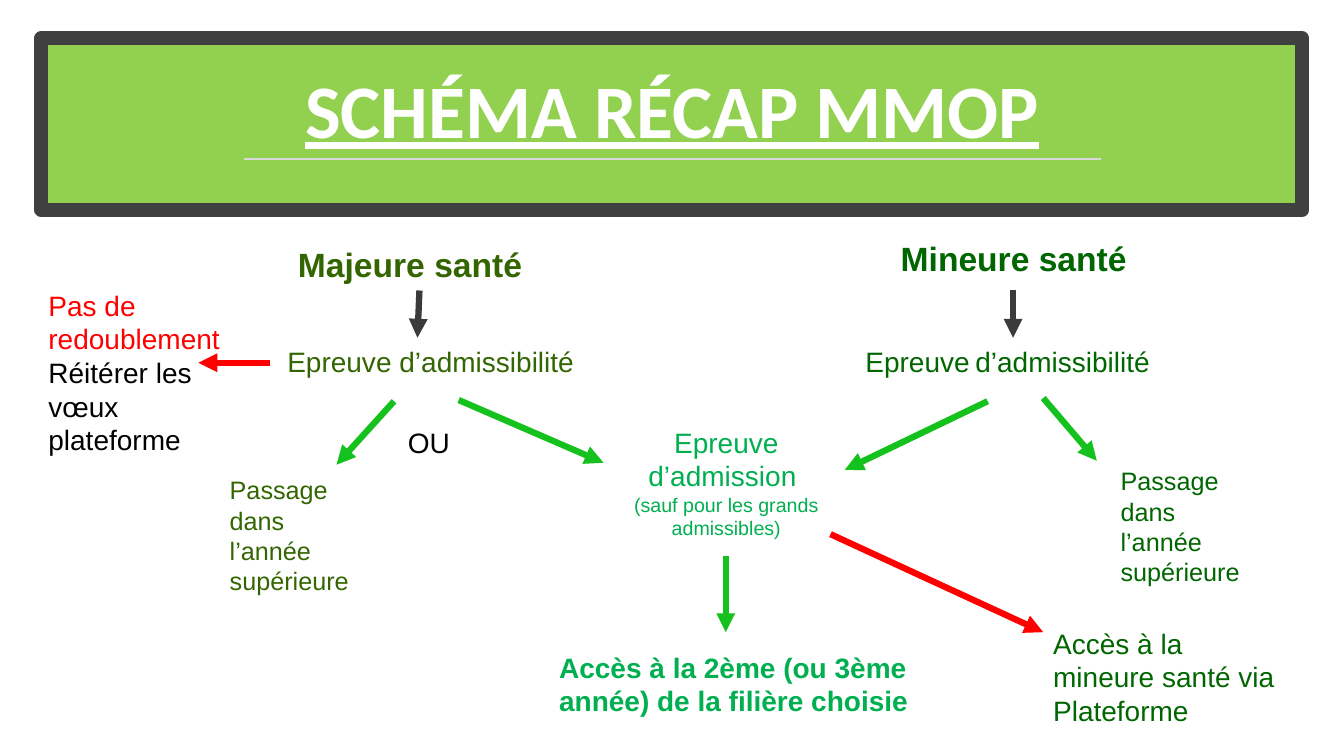
import pptx
import pptx.dml.color
import pptx.enum.shapes
import pptx.enum.text
import pptx.oxml
import pptx.oxml.ns
import pptx.util
from pptx.util import Cm

OLIVE = "336600"
FOREST = "006600"
EMERALD = "00B050"
ARROW_GREEN = "15C11D"
RED = "FF0000"
CHARCOAL = "3B3B3B"
BLACK = "000000"
WHITE = "FFFFFF"

CENTER = pptx.enum.text.PP_ALIGN.CENTER
LEFT = pptx.enum.text.PP_ALIGN.LEFT


def colour(value):
    return pptx.dml.color.RGBColor.from_string(value)


def write(para, text, size=20, hue=BLACK, bold=False, underline=False, font="Arial"):
    span = para.add_run()
    span.text = text
    span.font.name = font
    span.font.size = pptx.util.Pt(size)
    span.font.color.rgb = colour(hue)
    span.font.bold = bold
    span.font.underline = underline


def add_label(page, left, top, width, height, *lines, align=LEFT):
    box = page.shapes.add_textbox(Cm(left), Cm(top), Cm(width), Cm(height))
    frame = box.text_frame
    frame.word_wrap = True
    for index, spans in enumerate(lines):
        para = frame.add_paragraph() if index else frame.paragraphs[0]
        para.alignment = align
        for text, style in spans:
            write(para, text, **style)


def add_line(page, start, end, hue, width=4.5, arrow=True):
    line = page.shapes.add_connector(
        pptx.enum.shapes.MSO_CONNECTOR.STRAIGHT, *map(Cm, start + end))
    line.line.color.rgb = colour(hue)
    line.line.width = pptx.util.Pt(width)
    properties = line.element.spPr
    if arrow:
        head = pptx.oxml.parse_xml(
            f'<a:tailEnd {pptx.oxml.ns.nsdecls("a")} type="triangle"/>')
        line.line._get_or_add_ln().append(head)
    properties.append(pptx.oxml.parse_xml(
        f'<a:effectLst {pptx.oxml.ns.nsdecls("a")}/>'))


def add_banner(page, text):
    title = page.shapes.title
    title.left, title.top = Cm(1.47), Cm(1.3)
    title.width, title.height = Cm(30.94), Cm(2.72)
    frame = title.text_frame
    frame.word_wrap = True
    frame.auto_size = pptx.enum.text.MSO_AUTO_SIZE.NONE
    frame.vertical_anchor = pptx.enum.text.MSO_ANCHOR.BOTTOM
    para = frame.paragraphs[0]
    para.alignment = CENTER
    para.line_spacing = 0.9
    write(para, text, size=54, hue=WHITE, bold=True, underline=True, font="Calibri")

    banner = page.shapes.add_shape(
        pptx.enum.shapes.MSO_SHAPE.RECTANGLE, Cm(1.04), Cm(0.97), Cm(31.78), Cm(4.32))
    banner.shadow.inherit = False
    banner.fill.solid()
    banner.fill.fore_color.rgb = colour("92D050")
    banner.line.color.rgb = colour("404040")
    banner.line.width = pptx.util.Pt(10)
    title.element.addprevious(banner.element)
    add_line(page, (6.15, 4.01), (27.74, 4.01), "D9D9D9", width=1.75, arrow=False)


def add_tracks(page):
    tracks = [
        ("Majeure santé", OLIVE, (7.26, 6.02), 6.99, (5.54, 11.84)),
        ("Mineure santé", FOREST, (22.45, 5.87), 8.79, (27.99, 11.61)),
    ]
    for name, hue, corner, width, passage in tracks:
        add_label(page, *corner, width, 1.27, [(name, dict(size=24, hue=hue, bold=True))])
        add_label(page, *passage, 4.09, 3.33,
                  [("Passage dans l’année supérieure", dict(size=18, hue=hue))])
    add_label(page, 6.99, 8.56, 7.92, 1.12,
              [("Epreuve d’admissibilité", dict(hue=OLIVE))])
    add_label(page, 21.56, 8.56, 7.92, 1.12,
              [("Epreuve", dict(hue=FOREST)), (" ", dict(size=14, hue=FOREST)),
               ("d’admissibilité", dict(hue=FOREST))])


def add_outcomes(page):
    add_label(page, 0.97, 7.14, 5.41, 4.52,
              [("Pas de redoublement", dict(hue=RED))],
              [("Réitérer les vœux plateforme", dict(hue=BLACK))])
    add_label(page, 10.03, 10.59, 1.93, 1.12, [("OU", dict(hue=BLACK))])
    add_label(page, 14.94, 10.59, 6.73, 3.18,
              [("Epreuve d’admission ", dict(hue=EMERALD))],
              [("(sauf pour les grands admissibles)", dict(size=14, hue=EMERALD))],
              align=CENTER)
    add_label(page, 13.84, 16.26, 9.75, 1.96,
              [("Accès à la 2ème (ou 3ème année) de la filière choisie",
                dict(hue=EMERALD, bold=True))])
    add_label(page, 26.29, 15.65, 6.1, 2.82,
              [("Accès à la mineure santé via Plateforme", dict(hue=FOREST))])


def add_arrows(page):
    arrows = [
        ((10.57, 7.32), (10.52, 8.51), CHARCOAL),
        ((25.53, 7.32), (25.53, 8.51), CHARCOAL),
        ((6.81, 9.14), (5, 9.14), RED),
        ((9.93, 10.11), (8.48, 11.71), ARROW_GREEN),
        ((11.56, 10.08), (15.21, 11.66), ARROW_GREEN),
        ((26.29, 10.03), (27.64, 11.61), ARROW_GREEN),
        ((24.89, 10.11), (21.29, 11.84), ARROW_GREEN),
        ((20.93, 13.46), (26.29, 15.93), RED),
        ((18.29, 14.02), (18.29, 15.93), ARROW_GREEN),
    ]
    for start, end, hue in arrows:
        add_line(page, start, end, hue)


def main():
    deck = pptx.Presentation()
    deck.slide_width, deck.slide_height = Cm(33.87), Cm(19.05)
    page = deck.slides.add_slide(deck.slide_layouts.get_by_name("Title Only"))
    add_banner(page, "SCHÉMA RÉCAP MMOP")
    add_tracks(page)
    add_outcomes(page)
    add_arrows(page)
    deck.save("out.pptx")


if __name__ == "__main__":
    main()
